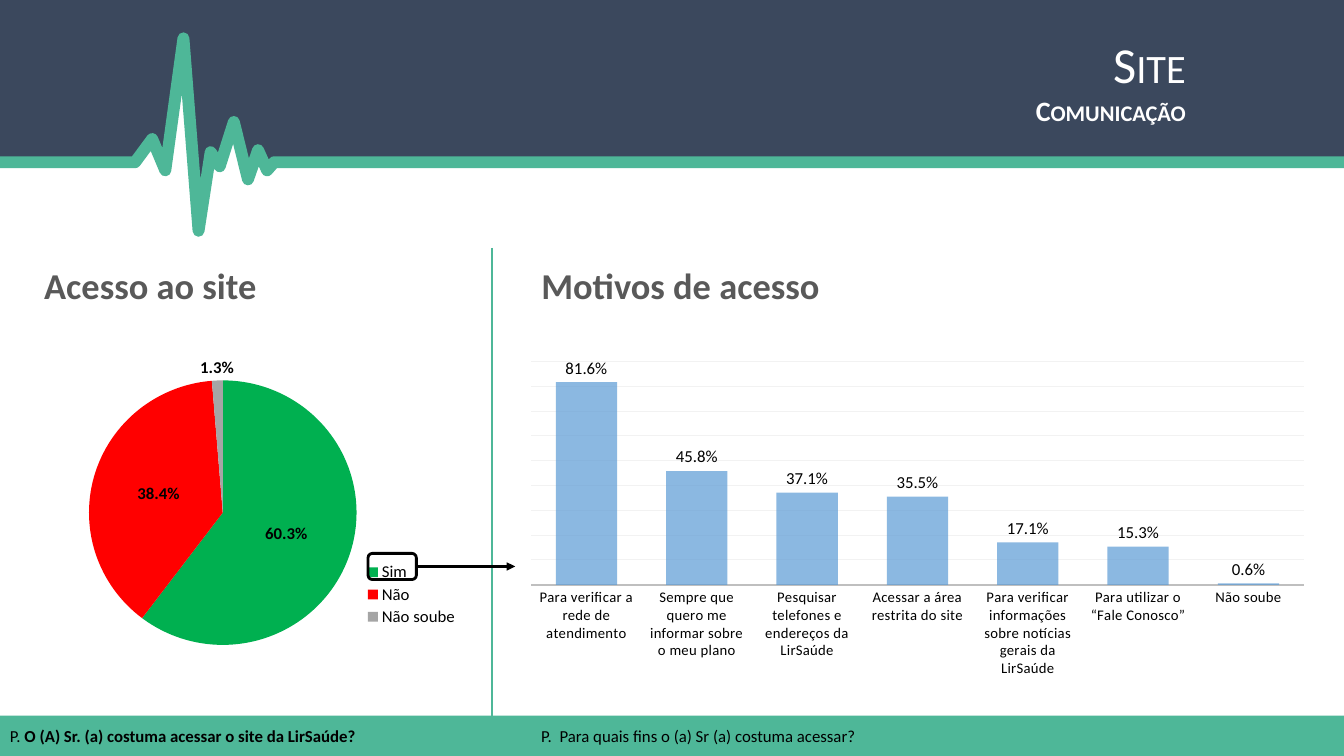
from itertools import accumulate

from lxml import etree
from pptx import Presentation
from pptx.chart.data import CategoryChartData
from pptx.dml.color import RGBColor
from pptx.enum.chart import XL_CHART_TYPE, XL_LABEL_POSITION, XL_LEGEND_POSITION, XL_TICK_MARK
from pptx.enum.shapes import MSO_CONNECTOR, MSO_SHAPE
from pptx.enum.text import MSO_AUTO_SIZE, PP_ALIGN
from pptx.oxml.ns import qn
from pptx.util import Pt

SCALE = 9144
WIDTH, HEIGHT = 1333, 750
FONT = "Calibri"
COLORS = {
    "navy": "3B485D", "teal": "4EB798", "white": "FFFFFF", "black": "000000",
    "heading": "595959", "yes": "00B050", "no": "FF0000", "unsure": "A5A5A5",
    "bar": "5B9BD5", "axis": "BFBFBF", "grid": "F2F2F2",
}
PIE, COLUMN = XL_CHART_TYPE.PIE, XL_CHART_TYPE.COLUMN_CLUSTERED
CENTER, OUTSIDE_END = XL_LABEL_POSITION.CENTER, XL_LABEL_POSITION.OUTSIDE_END
LEGEND_RIGHT, NO_TICK = XL_LEGEND_POSITION.RIGHT, XL_TICK_MARK.NONE
RECTANGLE, ROUNDED = MSO_SHAPE.RECTANGLE, MSO_SHAPE.ROUNDED_RECTANGLE
STRAIGHT, GROW = MSO_CONNECTOR.STRAIGHT, MSO_AUTO_SIZE.SHAPE_TO_FIT_TEXT
LEFT, RIGHT = PP_ALIGN.LEFT, PP_ALIGN.RIGHT
PERCENT = "0.0%"

BASELINE, BEAT_START, PULSE_WIDTH = 161, 134, 8.5
BEAT_STEPS = [0, 17, 13, 18, 15, 12, 9, 14, 14, 10, 9, 7]
BEAT_RISES = [0, 23, -8, 123, -68, 10, -4, 40, -17, 12, -8, 0]

ACCESS = {"Sim": 0.603, "Não": 0.384, "Não soube": 0.013}
ACCESS_COLORS = ("yes", "no", "unsure")
REASONS = {
    "Para verificar a rede de atendimento": 0.816,
    "Sempre que quero me informar sobre o meu plano": 0.458,
    "Pesquisar telefones e endereços da LirSaúde": 0.371,
    "Acessar a área restrita do site": 0.355,
    "Para verificar informações sobre notícias gerais da LirSaúde": 0.171,
    "Para utilizar o “Fale Conosco”": 0.153,
    "Não soube": 0.006,
}

FOOTER_TOP, FOOTER_TEXT_TOP = 710, 715
HEADING_TOP, CHART_TOP = 256, 352
REASONS_TEXT_LEFT, REASONS_CHART_LEFT = 527, 511
DIVIDER_X, DIVIDER_TOP = 488, 246
FRAME_LEFT, FRAME_TOP, FRAME_WIDTH, FRAME_HEIGHT = 365, 549, 48, 26


def color(name):
    return RGBColor.from_string(COLORS[name])


def emu(*lengths):
    return [length * SCALE for length in lengths]


def pulse_points():
    beat_xs = accumulate(BEAT_STEPS, initial=BEAT_START)
    next(beat_xs)
    beat = [(x, BASELINE - rise) for x, rise in zip(beat_xs, BEAT_RISES)]
    return [(0, BASELINE), *beat, (WIDTH, BASELINE)]


class SurveyPage:
    """Draws styled survey elements on one page."""

    def __init__(self, deck):
        self.shapes = deck.slides.add_slide(deck.slide_layouts[6]).shapes

    def style(self, font, size, name="black", bold=False):
        font.name, font.size, font.bold = FONT, Pt(size), bold
        font.color.rgb = color(name)

    def fill(self, target, name):
        target.fill.solid()
        target.fill.fore_color.rgb = color(name)

    def stroke(self, line, name, width):
        line.color.rgb = color(name)
        line.width = Pt(width)

    def paint(self, shape, name):
        shape.shadow.inherit = False
        self.fill(shape, name)
        shape.line.fill.background()

    def hollow(self, shape, name, width):
        shape.shadow.inherit = False
        shape.fill.background()
        self.stroke(shape.line, name, width)

    def freeform(self, points, close):
        builder = self.shapes.build_freeform(*points[0], scale=SCALE)
        builder.add_line_segments(points[1:], close=close)
        return builder.convert_to_shape()

    def header(self, pulse):
        self.paint(self.freeform([(0, 0), *pulse, (WIDTH, 0)], True), "navy")
        trace = self.freeform(pulse, False)
        self.hollow(trace, "teal", PULSE_WIDTH)
        etree.SubElement(trace.line._get_or_add_ln(), qn("a:round"))

    def band(self, *area):
        self.paint(self.shapes.add_shape(RECTANGLE, *emu(*area)), "teal")

    def frame(self, *area):
        shape = self.shapes.add_shape(ROUNDED, *emu(*area))
        self.hollow(shape, "black", 2)
        return shape

    def line(self, ends, name, width, source=None):
        connector = self.shapes.add_connector(STRAIGHT, *emu(*ends))
        self.stroke(connector.line, name, width)
        if source is not None:
            connector.begin_connect(source, 3)
            etree.SubElement(connector.line._get_or_add_ln(), qn("a:tailEnd"), type="triangle")
        etree.SubElement(connector._element.spPr, qn("a:effectLst"))

    def text(self, area, paragraphs, name="black", align=LEFT, small_caps=False):
        frame = self.shapes.add_textbox(*emu(*area)).text_frame
        frame.word_wrap = True
        frame.auto_size = GROW
        for index, spans in enumerate(paragraphs):
            para = frame.add_paragraph() if index else frame.paragraphs[0]
            para.alignment = align
            for words, size, bold in spans:
                span = para.add_run()
                span.text = words
                self.style(span.font, size, name, bold)
                if small_caps:
                    span.font._element.set("cap", "small")

    def chart(self, kind, area, values, position, bold=False):
        data = CategoryChartData(number_format=PERCENT)
        data.categories = list(values)
        data.add_series("Series 1", list(values.values()))
        chart = self.shapes.add_chart(kind, *emu(*area), data).chart
        chart.has_title = chart.has_legend = False
        self.style(chart.font, 10)
        plot = chart.plots[0]
        plot.vary_by_categories = kind == PIE
        labels = plot.series[0].data_labels
        labels.show_value = True
        labels.number_format, labels.number_format_is_linked = PERCENT, False
        labels.position = position
        self.style(labels.font, 12, bold=bold)
        return chart, plot

    def place(self, parent, index, ratios, inner=False):
        for old in parent.findall(qn("c:layout")):
            parent.remove(old)
        layout = etree.Element(qn("c:layout"))
        manual = etree.SubElement(layout, qn("c:manualLayout"))
        settings = [("layoutTarget", "inner")] if inner else []
        settings += [("xMode", "edge"), ("yMode", "edge"), *zip("xywh", ratios)]
        for tag, value in settings:
            etree.SubElement(manual, qn(f"c:{tag}"), val=str(value))
        parent.insert(index, layout)

    def pie(self, area, values, names):
        chart, plot = self.chart(PIE, area, values, CENTER, True)
        points = plot.series[0].points
        for index, name in enumerate(names):
            self.fill(points[index].format, name)
        smallest = points[len(names) - 1].data_label
        self.style(smallest.font, 12, bold=True)
        smallest.position = OUTSIDE_END
        chart.has_legend = True
        chart.legend.position = LEGEND_RIGHT
        chart.legend.include_in_layout = False
        self.style(chart.legend.font, 12)
        self.place(chart.legend._element, 1, (0.68, 0.64, 0.2, 0.22))
        self.place(chart._chartSpace.chart.plotArea, 0, (0.12, 0.07, 0.61, 0.84), True)

    def columns(self, area, values):
        chart, plot = self.chart(COLUMN, area, values, OUTSIDE_END)
        plot.gap_width, plot.overlap = 80, 25
        series = plot.series[0]
        self.fill(series.format, "bar")
        tint = series._element.find(".//" + qn("a:srgbClr"))
        etree.SubElement(tint, qn("a:alpha"), val="70000")
        category, value = chart.category_axis, chart.value_axis
        category.major_tick_mark = category.minor_tick_mark = NO_TICK
        self.style(category.tick_labels.font, 10.5)
        category.tick_labels.font._element.set("spc", "20")
        self.stroke(category.format.line, "axis", 1.25)
        value.minimum_scale, value.maximum_scale, value.major_unit = 0, 0.9, 0.1
        value.has_major_gridlines = True
        self.stroke(value.major_gridlines.format.line, "grid", 0.75)
        value.visible = False
        self.place(chart._chartSpace.chart.plotArea, 0, (0.02, 0.02, 0.96, 0.68), True)


def main():
    deck = Presentation()
    deck.slide_width, deck.slide_height = emu(WIDTH, HEIGHT)
    page = SurveyPage(deck)
    page.header(pulse_points())
    page.pie((-3, CHART_TOP, 527, 316), ACCESS, ACCESS_COLORS)
    page.band(0, FOOTER_TOP, WIDTH, HEIGHT - FOOTER_TOP)
    title = [[("Site", 36, False)], [("Comunicação", 20, True)]]
    page.text((246, 28, 940, 104), title, "white", RIGHT, True)
    access = [("P. ", 12, False), ("O (A) Sr. (a) costuma acessar o site da LirSaúde?", 12, True)]
    reasons = [("P.  Para quais fins o (a) Sr (a) costuma acessar?", 12, False)]
    for left, width, question in ((0, 652, access), (REASONS_TEXT_LEFT, 636, reasons)):
        page.text((left, FOOTER_TEXT_TOP, width, 30), [question])
    for left, width, heading in ((34, 455, "Acesso ao site"), (REASONS_TEXT_LEFT, 568, "Motivos de acesso")):
        page.text((left, HEADING_TOP, width, 54), [[(heading, 26, True)]], "heading")
    page.line((DIVIDER_X, DIVIDER_TOP, DIVIDER_X, FOOTER_TEXT_TOP), "teal", 1)
    highlight = page.frame(FRAME_LEFT, FRAME_TOP, FRAME_WIDTH, FRAME_HEIGHT)
    arrow_y = FRAME_TOP + FRAME_HEIGHT // 2
    page.line((FRAME_LEFT + FRAME_WIDTH, arrow_y, REASONS_CHART_LEFT, arrow_y), "black", 2, highlight)
    page.columns((REASONS_CHART_LEFT, CHART_TOP, 798, 326), REASONS)
    deck.save("out.pptx")


if __name__ == "__main__":
    main()
